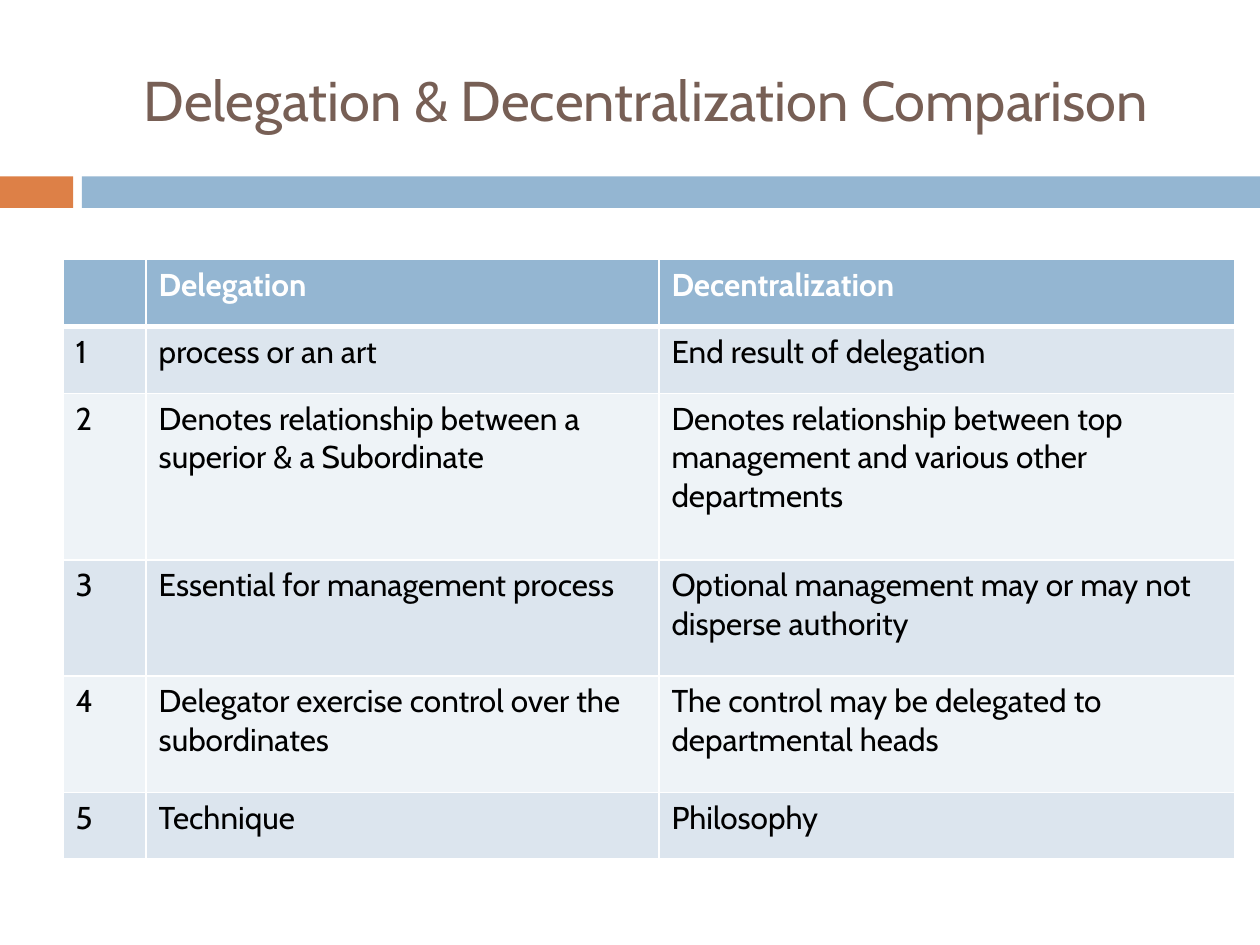
from lxml.etree import SubElement
from pptx import Presentation
from pptx.dml.color import RGBColor
from pptx.enum.shapes import MSO_SHAPE
from pptx.enum.text import MSO_ANCHOR, PP_ALIGN
from pptx.oxml.ns import qn
from pptx.util import Inches, Pt

FONT = "Cabin"
BROWN = RGBColor(0x77, 0x5F, 0x55)
ORANGE = RGBColor(0xDD, 0x80, 0x47)
BLUE = RGBColor(0x94, 0xB6, 0xD2)
BAND_DARK = RGBColor(0xDC, 0xE5, 0xEE)
BAND_LIGHT = RGBColor(0xEE, 0xF3, 0xF7)
WHITE = RGBColor(0xFF, 0xFF, 0xFF)
BLACK = RGBColor(0x00, 0x00, 0x00)

COLUMN_WIDTHS = (0.66, 4.07, 4.57)
ROW_HEIGHTS = (0.53, 0.53, 1.32, 0.92, 0.92, 0.53)
HEADINGS = ("", "Delegation", "Decentralization")
COMPARISONS = (
    ("process or an art", "End result of delegation"),
    ("Denotes relationship between a superior & a Subordinate",
     "Denotes relationship between top management and various other departments"),
    ("Essential for management process",
     "Optional management may or may not disperse authority"),
    ("Delegator exercise control over the subordinates",
     "The control may be delegated to departmental heads"),
    ("Technique", "Philosophy"),
)


def write(frame, text, size=18, color=BLACK, bold=False, align=PP_ALIGN.LEFT):
    paragraph = frame.paragraphs[0]
    paragraph.alignment = align
    paragraph.font.size = Pt(size)
    if text:
        run = paragraph.add_run()
        run.text = text
        run.font.name = FONT
        run.font.size = Pt(size)
        run.font.bold = bold
        run.font.color.rgb = color


def add_title(slide, left, top, width, height):
    title = slide.shapes.add_textbox(*map(Inches, (left, top, width, height)))
    frame = title.text_frame
    frame.word_wrap = True
    frame.vertical_anchor = MSO_ANCHOR.MIDDLE
    write(frame, "Delegation & Decentralization Comparison",
          size=32, color=BROWN, align=PP_ALIGN.CENTER)


def add_divider(slide, left, top, width, height, accent=0.58, gap=0.07):
    """Draw a short accent bar, a gap and a long bar across the given box."""
    start = accent + gap
    for offset, length, color in ((0, accent, ORANGE),
                                  (start, width - start, BLUE)):
        bar = slide.shapes.add_shape(
            MSO_SHAPE.RECTANGLE,
            *map(Inches, (left + offset, top, length, height)))
        bar.shadow.inherit = False
        bar.fill.solid()
        bar.fill.fore_color.rgb = color
        bar.line.fill.background()


def set_borders(cell, top=1, bottom=1):
    """Give the cell white borders, with widths in points."""
    properties = cell._tc.get_or_add_tcPr()
    for side, width in (("L", 1), ("R", 1), ("T", top), ("B", bottom)):
        line = SubElement(properties, qn(f"a:ln{side}"), w=str(Pt(width)))
        fill = SubElement(line, qn("a:solidFill"))
        SubElement(fill, qn("a:srgbClr"), val=str(WHITE))


def add_comparison_table(slide, left, top, width, height):
    rows = [HEADINGS] + [(str(number), *pair)
                         for number, pair in enumerate(COMPARISONS, 1)]
    table = slide.shapes.add_table(
        len(rows), len(HEADINGS),
        *map(Inches, (left, top, width, height))).table
    for column, share in zip(table.columns, COLUMN_WIDTHS):
        column.width = Inches(width * share / sum(COLUMN_WIDTHS))
    for row, share in zip(table.rows, ROW_HEIGHTS):
        row.height = Inches(height * share / sum(ROW_HEIGHTS))

    for r, texts in enumerate(rows):
        is_header = r == 0
        band = BLUE if is_header else (BAND_LIGHT, BAND_DARK)[r % 2]
        for c, text in enumerate(texts):
            cell = table.cell(r, c)
            set_borders(cell, top=3 if r == 1 else 1,
                        bottom=3 if is_header else 1)
            cell.fill.solid()
            cell.fill.fore_color.rgb = band
            write(cell.text_frame, text, bold=is_header,
                  color=WHITE if is_header else BLACK)


def main():
    deck = Presentation()
    deck.slide_width, deck.slide_height = Inches(10), Inches(7.5)
    slide = deck.slides.add_slide(deck.slide_layouts[6])
    add_divider(slide, 0, 1.4, 10, 0.25)
    add_title(slide, 0.67, 0.25, 8.92, 1.08)
    add_comparison_table(slide, 0.5, 2.06, 9.3, 4.76)
    deck.save("out.pptx")


if __name__ == "__main__":
    main()
